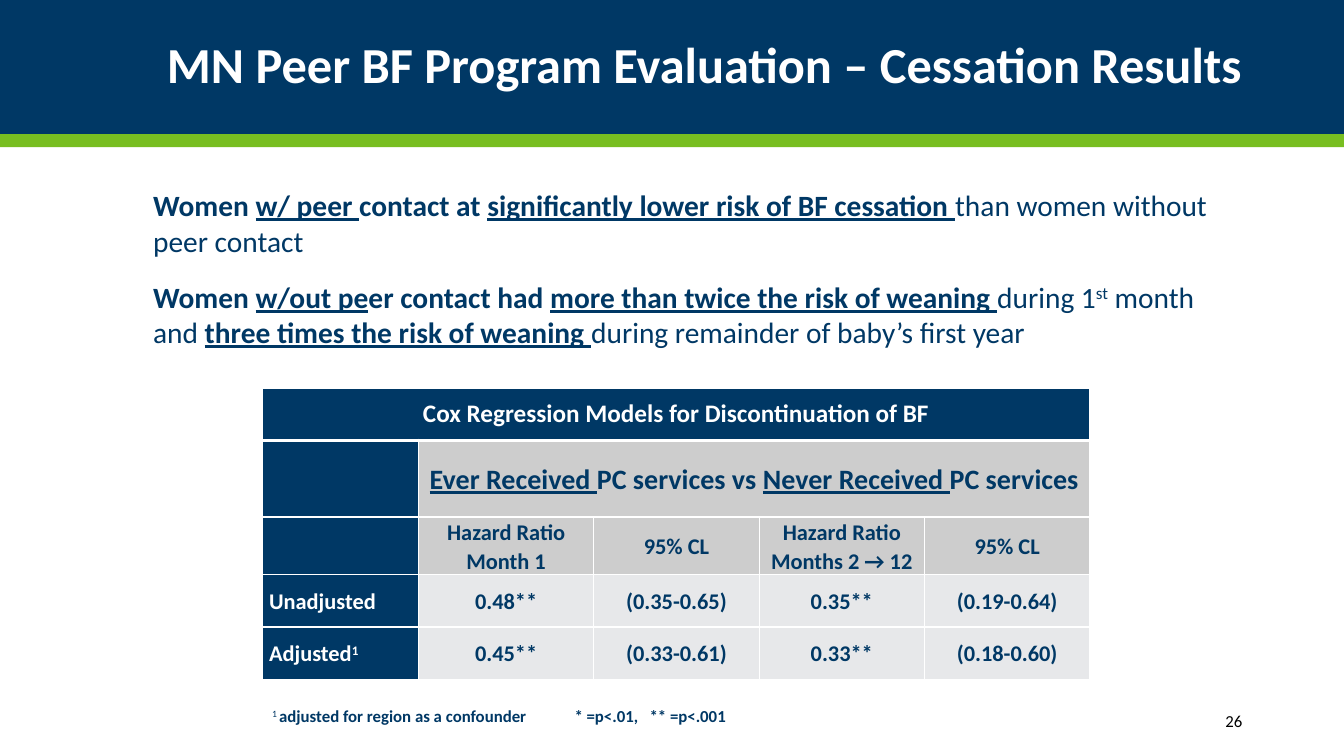
from lxml.etree import SubElement
from pptx import Presentation
from pptx.dml.color import RGBColor
from pptx.enum.shapes import MSO_SHAPE
from pptx.enum.text import MSO_ANCHOR, PP_ALIGN
from pptx.oxml.ns import qn
from pptx.util import Inches, Pt

COLORS = {"navy": "003865", "green": "78BE21", "white": "FFFFFF",
          "black": "000000", "gray": "CDCDCD", "pale": "E7E8EA"}
FONT = "Calibri"

# Spans are (text, marks): b bold, u underlined, ^ superscript
TITLE = [("MN Peer BF Program Evaluation – Cessation Results", "b")]
FINDINGS = [
    [("Women ", "b"), ("w/ peer ", "bu"), ("contact at ", "b"),
     ("significantly lower risk of BF cessation ", "bu"),
     ("than women without peer contact", "")],
    [("Women ", "b"), ("w/out pe", "bu"), ("er contact had ", "b"),
     ("more than twice the risk of weaning ", "bu"), ("during 1", ""),
     ("st", "^"), (" month and ", ""), ("three times the risk of weaning ", "bu"),
     ("during remainder of baby’s first year", "")],
]
FOOTNOTE = [("1 ", "^"),
            ("adjusted for region as a confounder\t* =p<.01,   ** =p<.001", "b")]
PAGE_NUMBER = [("26", "")]

TABLE_TITLE = [("Cox Regression Models for Discontinuation of BF", "b")]
COMPARISON = [("Ever Received ", "bu"), ("PC services vs ", "b"),
              ("Never Received ", "bu"), ("PC services", "b")]
MEASURES = ["Hazard Ratio Month 1", "95% CL", "Hazard Ratio Months 2 → 12", "95% CL"]
MODELS = [
    ([("Unadjusted", "b")], ["0.48**", "(0.35-0.65)", "0.35**", "(0.19-0.64)"]),
    ([("Adjusted", "b"), ("1", "b^")], ["0.45**", "(0.33-0.61)", "0.33**", "(0.18-0.60)"]),
]
COLUMN_WIDTHS = [1.55, 1.74, 1.64, 1.64, 1.64]
ROW_HEIGHTS = [0.52, 0.76, 0.52, 0.52, 0.52]


def rgb(name):
    return RGBColor.from_string(COLORS[name])


def write(para, spans, size, color, align=PP_ALIGN.LEFT, spacing=None):
    para.alignment = align
    if spacing:
        para.line_spacing = spacing
    for text, marks in spans:
        span = para.add_run()
        span.text = text
        font = span.font
        font.name, font.size = FONT, Pt(size)
        font.color.rgb = rgb(color)
        font.bold = "b" in marks
        font.underline = "u" in marks
        if "^" in marks:
            span._r.get_or_add_rPr().set("baseline", "30000")


def add_band(page, top, height, color):
    band = page.shapes.add_shape(MSO_SHAPE.RECTANGLE, 0, Inches(top),
                                 Inches(13.33), Inches(height))
    band.shadow.inherit = False
    band.fill.solid()
    band.fill.fore_color.rgb = rgb(color)
    band.line.fill.background()


def add_frame(page, left, top, width, height, anchor=MSO_ANCHOR.TOP):
    box = page.shapes.add_textbox(Inches(left), Inches(top), Inches(width), Inches(height))
    frame = box.text_frame
    frame.word_wrap = True
    frame.vertical_anchor = anchor
    return frame


def set_borders(cell, bottom_width=1):
    """Draw white cell borders; they must come before the fill in the XML."""
    properties = cell._tc.get_or_add_tcPr()
    for place, side in enumerate(["lnL", "lnR", "lnT", "lnB"]):
        width = bottom_width if side == "lnB" else 1
        line = SubElement(properties, qn(f"a:{side}"), w=str(Pt(width)))
        fill = SubElement(line, qn("a:solidFill"))
        SubElement(fill, qn("a:srgbClr"), val=COLORS["white"])
        properties.insert(place, line)


def fill_cell(cell, spans, size, color, fill, align=PP_ALIGN.CENTER, spacing=1.07):
    cell.fill.solid()
    cell.fill.fore_color.rgb = rgb(fill)
    cell.vertical_anchor = MSO_ANCHOR.MIDDLE
    cell.margin_left = cell.margin_right = Inches(0.07)
    cell.margin_top = cell.margin_bottom = 0
    write(cell.text_frame.paragraphs[0], spans, size, color, align, spacing)


def add_results_table(page):
    table = page.shapes.add_table(len(ROW_HEIGHTS), len(COLUMN_WIDTHS), Inches(2.6),
                                  Inches(3.85), Inches(sum(COLUMN_WIDTHS)),
                                  Inches(sum(ROW_HEIGHTS))).table
    for column, width in zip(table.columns, COLUMN_WIDTHS):
        column.width = Inches(width)
    for row, height in zip(table.rows, ROW_HEIGHTS):
        row.height = Inches(height)
    table.cell(0, 0).merge(table.cell(0, 4))
    table.cell(1, 1).merge(table.cell(1, 4))

    fill_cell(table.cell(0, 0), TABLE_TITLE, 18, "white", "navy", spacing=None)
    fill_cell(table.cell(1, 1), COMPARISON, 20, "navy", "gray")
    body = [([], MEASURES, "gray")] + [(label, values, "pale") for label, values in MODELS]
    fill_cell(table.cell(1, 0), [], 16, "white", "navy")
    for row, (label, values, fill) in enumerate(body, start=2):
        fill_cell(table.cell(row, 0), label, 16, "white", "navy", PP_ALIGN.LEFT)
        for column, value in enumerate(values, start=1):
            fill_cell(table.cell(row, column), [(value, "b")], 16, "navy", fill)
    for row in range(len(ROW_HEIGHTS)):
        for column in range(len(COLUMN_WIDTHS)):
            set_borders(table.cell(row, column), 3 if row == 0 else 1)


def main():
    deck = Presentation()
    deck.slide_width, deck.slide_height = Inches(13.33), Inches(7.5)
    page = deck.slides.add_slide(deck.slide_layouts[6])

    add_band(page, 0, 1.33, "navy")
    add_band(page, 1.33, 0.13, "green")
    title = add_frame(page, 0.92, 0.17, 11.5, 1, MSO_ANCHOR.MIDDLE)
    write(title.paragraphs[0], TITLE, 36, "white", PP_ALIGN.RIGHT, 0.9)

    findings = add_frame(page, 0.92, 1.81, 11.42, 2.05)
    for index, spans in enumerate(FINDINGS):
        para = findings.add_paragraph() if index else findings.paragraphs[0]
        para.space_before, para.space_after = Pt(5), Pt(10)
        para._p.get_or_add_pPr().set("marL", str(Inches(0.5)))
        write(para, spans, 21, "navy")

    number = add_frame(page, 10.82, 6.95, 1.6, 0.4, MSO_ANCHOR.MIDDLE)
    write(number.paragraphs[0], PAGE_NUMBER, 12, "black", PP_ALIGN.RIGHT)
    add_results_table(page)
    footnote = add_frame(page, 2.6, 6.95, 5.64, 0.3)
    write(footnote.paragraphs[0], FOOTNOTE, 12, "navy")

    deck.save("out.pptx")


if __name__ == "__main__":
    main()
